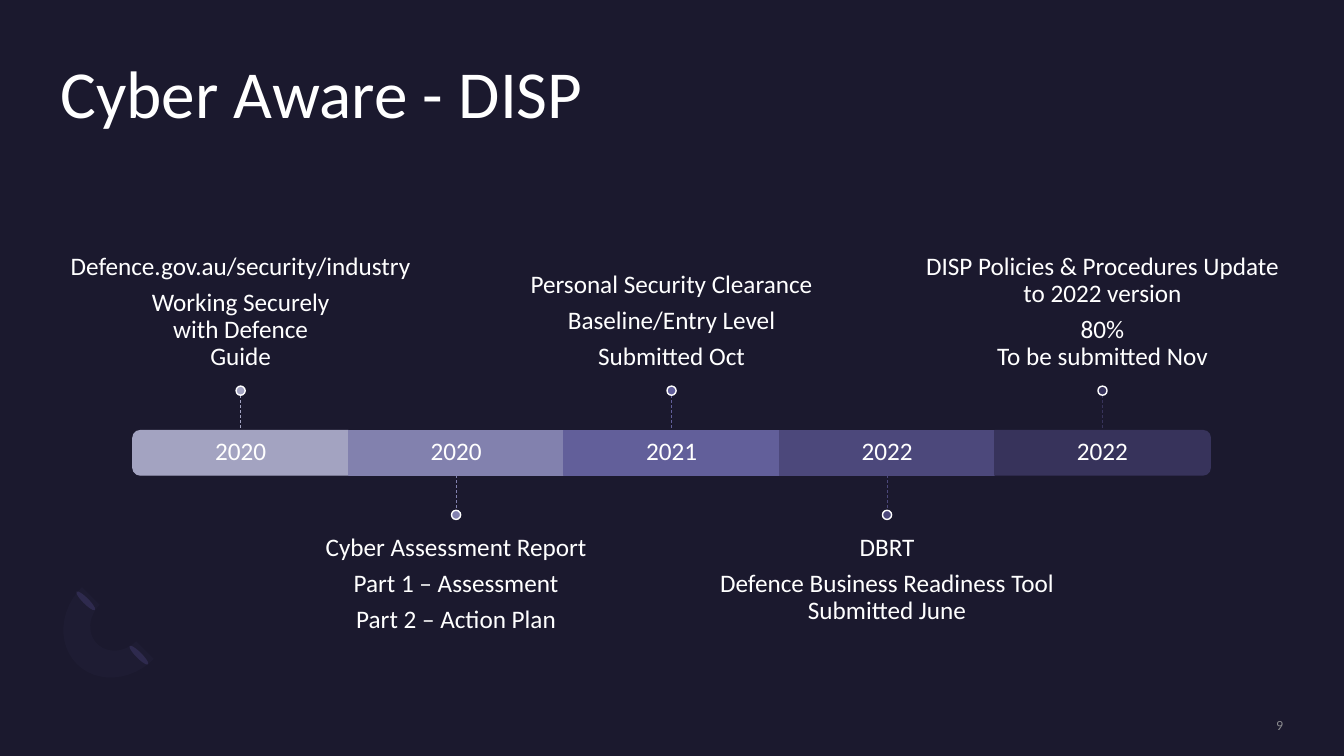
from dataclasses import dataclass
from math import cos, pi, sin, sqrt

from lxml import etree
from pptx import Presentation
from pptx.dml.color import RGBColor
from pptx.enum.dml import MSO_LINE
from pptx.enum.shapes import MSO_CONNECTOR, MSO_SHAPE
from pptx.enum.text import MSO_ANCHOR, PP_ALIGN
from pptx.oxml.ns import qn
from pptx.util import Cm, Pt

RECTANGLE = MSO_SHAPE.RECTANGLE
ROUNDED_END = MSO_SHAPE.ROUND_2_SAME_RECTANGLE
OVAL = MSO_SHAPE.OVAL
STRAIGHT = MSO_CONNECTOR.STRAIGHT
DASH = MSO_LINE.DASH
TOP, MIDDLE, BOTTOM = MSO_ANCHOR.TOP, MSO_ANCHOR.MIDDLE, MSO_ANCHOR.BOTTOM
LEFT, CENTER, RIGHT = PP_ALIGN.LEFT, PP_ALIGN.CENTER, PP_ALIGN.RIGHT

FONT = "Calibri"
WHITE = "FFFFFF"
BACKGROUND = "1B192E"
BAR_LEFT, BAR_TOP = 3.35, 10.85
STEP_WIDTH, BAR_HEIGHT = 5.43, 1.12
STEM, DOT = 0.89, 0.23
NOTE_WIDTH, NOTE_HEIGHT = 9.07, 3.86
INSET = 0.38


@dataclass(frozen=True)
class Milestone:
    year: str
    color: str
    notes: tuple[str, ...]
    rotation: int = 0


@dataclass(frozen=True)
class TextStyle:
    size: float = 18
    color: str = WHITE
    align: PP_ALIGN = CENTER
    anchor: MSO_ANCHOR = MIDDLE
    inset_top: float = 0
    inset_bottom: float = 0
    space_after: float = 6.3


MILESTONES = (
    Milestone("2020", "A3A3C1", (
        "Defence.gov.au/security/industry",
        "Working Securely\nwith Defence\nGuide"), 270),
    Milestone("2020", "8281AE", (
        "Cyber Assessment Report", "Part 1 – Assessment", "Part 2 – Action Plan")),
    Milestone("2021", "625F9A", (
        "Personal Security Clearance", "Baseline/Entry Level", "Submitted Oct")),
    Milestone("2022", "4C487B", (
        "DBRT", "Defence Business Readiness Tool\nSubmitted June")),
    Milestone("2022", "37335B", (
        "DISP Policies & Procedures Update to 2022 version",
        "80%\nTo be submitted Nov"), 90),
)


def rgb(color: str) -> RGBColor:
    return RGBColor.from_string(color)


def set_opacity(element, percent: int) -> None:
    color = next(element.iter(qn("a:srgbClr")))
    etree.SubElement(color, qn("a:alpha")).set("val", str(percent * 1000))


def paint(shape, fill: str, line: str | None = None) -> None:
    shape.shadow.inherit = False
    shape.fill.solid()
    shape.fill.fore_color.rgb = rgb(fill)
    if line is None:
        shape.line.fill.background()
    else:
        shape.line.color.rgb = rgb(line)
        shape.line.width = Pt(1)


def add_shape(page, kind: MSO_SHAPE, center_x: float, center_y: float, width: float,
              height: float, fill: str, line: str | None = None, rotation: int = 0) -> None:
    shape = page.shapes.add_shape(kind, Cm(center_x - width / 2), Cm(center_y - height / 2),
                                  Cm(width), Cm(height))
    shape.rotation = rotation
    paint(shape, fill, line)


def add_text(page, left: float, top: float, width: float, height: float,
             texts: tuple[str, ...], style: TextStyle):
    box = page.shapes.add_textbox(Cm(left), Cm(top), Cm(width), Cm(height))
    frame = box.text_frame
    frame.word_wrap = True
    frame.vertical_anchor = style.anchor
    frame.margin_left = frame.margin_right = 0
    frame.margin_top, frame.margin_bottom = Cm(style.inset_top), Cm(style.inset_bottom)
    for index, text in enumerate(texts):
        para = frame.add_paragraph() if index else frame.paragraphs[0]
        para.alignment = style.align
        para.line_spacing = 0.9
        para.space_after = Pt(style.space_after)
        for row, line in enumerate(text.split("\n")):
            if row:
                para.add_line_break()
            span = para.add_run()
            span.text = line
            span.font.name = FONT
            span.font.size = Pt(style.size)
            span.font.color.rgb = rgb(style.color)
    return box


def add_stem(page, x: float, top: float, color: str) -> None:
    stem = page.shapes.add_connector(STRAIGHT, Cm(x), Cm(top), Cm(x), Cm(top + STEM))
    stem.line.color.rgb = rgb(color)
    stem.line.width = Pt(0.5)
    stem.line.dash_style = DASH
    etree.SubElement(stem._element.spPr, qn("a:effectLst"))


def arc_points(radius: float, depth: float) -> list[tuple[int, int]]:
    points = []
    for step in range(25):
        angle = pi * step / 24
        along, across = -radius * cos(angle), depth * sin(angle)
        points.append((Cm(2.97 + (along - across) / sqrt(2)),
                       Cm(15.7 + (along + across) / sqrt(2))))
    return points


def add_ornament(page) -> None:
    for center_x, center_y in ((3.5, 16.51), (2.16, 15.14)):
        add_shape(page, OVAL, center_x, center_y, 0.15, 0.66, "2C284A", rotation=135)
    outline = arc_points(1.28, 1.46) + arc_points(0.65, 0.74)[::-1]
    builder = page.shapes.build_freeform(*outline[0])
    builder.add_line_segments(outline[1:], close=True)
    arc = builder.convert_to_shape()
    paint(arc, "7771B2")
    set_opacity(arc._element.spPr, 4)


def add_milestone(page, index: int, milestone: Milestone) -> None:
    left = BAR_LEFT + index * STEP_WIDTH
    center = left + STEP_WIDTH / 2
    middle = BAR_TOP + BAR_HEIGHT / 2
    above = index % 2 == 0
    if milestone.rotation:
        add_shape(page, ROUNDED_END, center, middle, BAR_HEIGHT, STEP_WIDTH,
                  milestone.color, milestone.color, milestone.rotation)
    else:
        add_shape(page, RECTANGLE, center, middle, STEP_WIDTH, BAR_HEIGHT,
                  milestone.color, milestone.color)
    add_text(page, left, BAR_TOP, STEP_WIDTH, BAR_HEIGHT, (milestone.year,),
             TextStyle(inset_top=INSET, inset_bottom=INSET))
    if above:
        stem_top = BAR_TOP - STEM
        dot_y = stem_top - DOT / 2
        note_top = stem_top - DOT - NOTE_HEIGHT
        style = TextStyle(anchor=BOTTOM, inset_bottom=INSET)
    else:
        stem_top = BAR_TOP + BAR_HEIGHT
        dot_y = stem_top + STEM + DOT / 2
        note_top = stem_top + STEM + DOT
        style = TextStyle(anchor=TOP, inset_top=INSET)
    add_text(page, center - NOTE_WIDTH / 2, note_top, NOTE_WIDTH, NOTE_HEIGHT,
             milestone.notes, style)
    add_stem(page, center, stem_top, milestone.color)
    add_shape(page, OVAL, center, dot_y, DOT, DOT, milestone.color, WHITE)


def main() -> None:
    deck = Presentation()
    deck.slide_width, deck.slide_height = Cm(33.87), Cm(19.05)
    page = deck.slides.add_slide(deck.slide_layouts[6])
    page.background.fill.solid()
    page.background.fill.fore_color.rgb = rgb(BACKGROUND)
    add_ornament(page)
    add_text(page, 1.52, 1.52, 30.81, 3.71, ("Cyber Aware - DISP",),
             TextStyle(size=48, align=LEFT, anchor=TOP, space_after=0))
    for index, milestone in enumerate(MILESTONES):
        add_milestone(page, index, milestone)
    number = add_text(page, 27.64, 18.08, 4.7, 0.43, ("9",),
                      TextStyle(size=10, color="A6A6A6", align=RIGHT, space_after=0))
    set_opacity(number._element, 80)
    deck.save("out.pptx")


if __name__ == "__main__":
    main()
